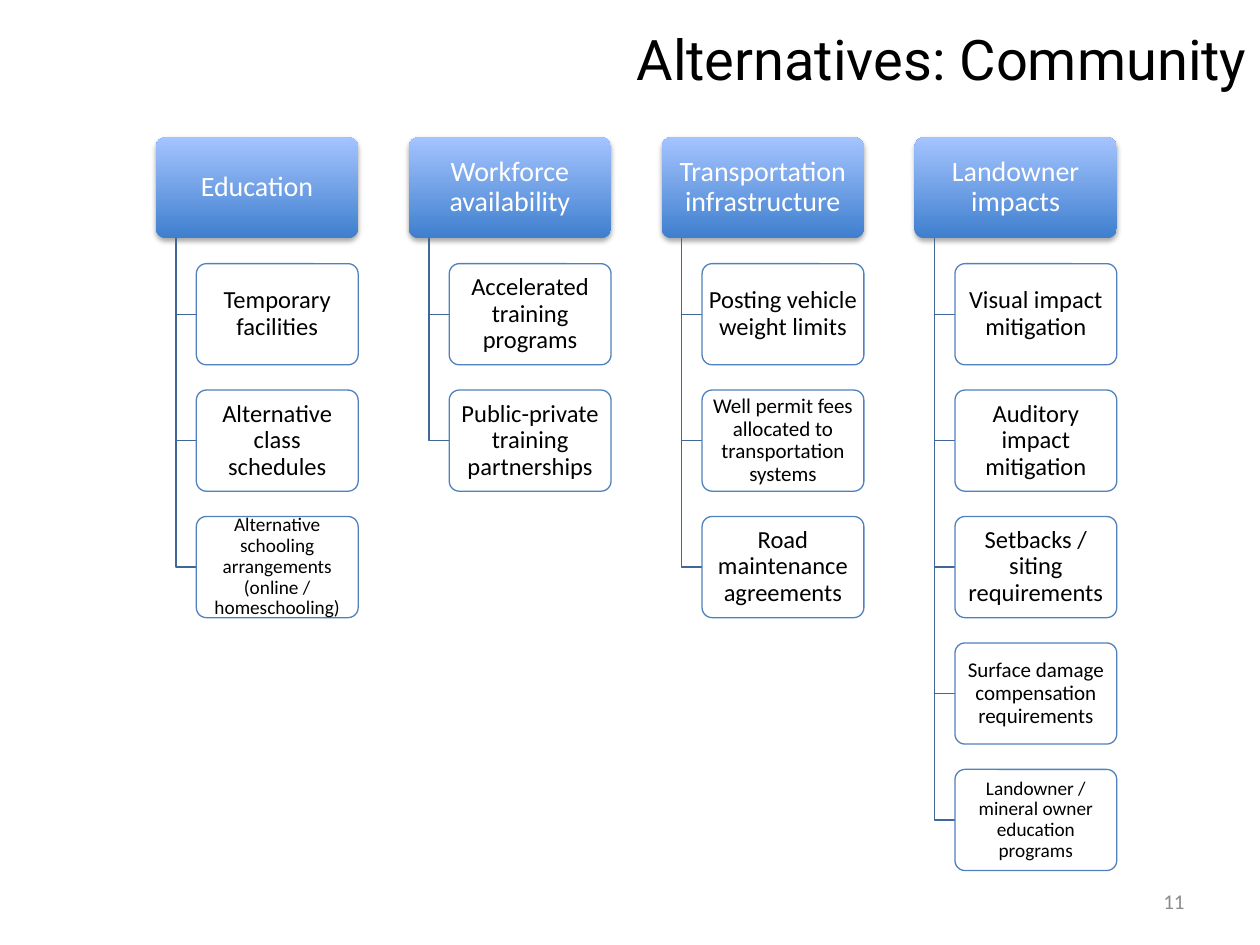
import pptx
import pptx.dml.color
import pptx.enum.shapes
import pptx.enum.text
import pptx.oxml
import pptx.oxml.ns
import pptx.util

Pt = pptx.util.Pt
RGBColor = pptx.dml.color.RGBColor
ALIGN = pptx.enum.text.PP_ALIGN

WHITE = RGBColor(0xFF, 0xFF, 0xFF)
BLACK = RGBColor(0x00, 0x00, 0x00)
GREY = RGBColor(0x8C, 0x8C, 0x8C)
HEADER_BOTTOM = RGBColor(0x3F, 0x7F, 0xCE)
HEADER_TOP = RGBColor(0xA4, 0xC4, 0xFF)
OUTLINE = RGBColor(0x4F, 0x81, 0xBD)
BRANCH = RGBColor(0x3F, 0x67, 0x97)

LEFT, TOP = 89.1, 78.4
HEADER_WIDTH = 115.6
BOX_HEIGHT = HEADER_WIDTH / 2
COLUMN_PITCH = HEADER_WIDTH * 1.25
ROW_PITCH = BOX_HEIGHT * 1.25
STEM_INSET = HEADER_WIDTH / 10
ITEM_INSET = HEADER_WIDTH / 5
ITEM_WIDTH = HEADER_WIDTH - ITEM_INSET

# Each column: heading, then (item, font size)
COLUMNS = [
    ("Education", [
        ("Temporary facilities", 14),
        ("Alternative class schedules", 14),
        ("Alternative schooling arrangements (online / homeschooling)", 11),
    ]),
    ("Workforce availability", [
        ("Accelerated training programs", 14),
        ("Public-private training partnerships", 14),
    ]),
    ("Transportation infrastructure", [
        ("Posting vehicle weight limits", 14),
        ("Well permit fees allocated to transportation systems", 12),
        ("Road maintenance agreements", 14),
    ]),
    ("Landowner impacts", [
        ("Visual impact mitigation", 14),
        ("Auditory impact mitigation", 14),
        ("Setbacks / siting requirements", 14),
        ("Surface damage compensation requirements", 12),
        ("Landowner / mineral owner education programs", 11),
    ]),
]

SHADOW_XML = (
    '<a:outerShdw %s blurRad="%d" dist="%d" dir="5400000" rotWithShape="0">'
    '<a:srgbClr val="000000"><a:alpha val="35000"/></a:srgbClr></a:outerShdw>'
    % (pptx.oxml.ns.nsdecls("a"), Pt(3.1), Pt(1.8))
)
ALPHA_XML = '<a:alpha %s val="90000"/>' % pptx.oxml.ns.nsdecls("a")


def write_text(frame, text, size, color, align, font="Calibri"):
    frame.text = text
    frame.word_wrap = True
    frame.vertical_anchor = pptx.enum.text.MSO_ANCHOR.MIDDLE
    paragraph = frame.paragraphs[0]
    paragraph.alignment = align
    paragraph.font.size = Pt(size)
    paragraph.font.name = font
    paragraph.font.color.rgb = color
    return paragraph


def add_box(slide, x, y, width, text, size, color):
    """Add a rounded box whose text margins follow the font size."""
    box = slide.shapes.add_shape(
        pptx.enum.shapes.MSO_SHAPE.ROUNDED_RECTANGLE,
        Pt(x), Pt(y), Pt(width), Pt(BOX_HEIGHT))
    box.adjustments[0] = 0.1
    box.shadow.inherit = False
    frame = box.text_frame
    frame.margin_left = frame.margin_right = Pt(size * 0.15)
    frame.margin_top = frame.margin_bottom = Pt(size * 0.1)
    write_text(frame, text, size, color, ALIGN.CENTER).line_spacing = 0.9
    return box


def add_header(slide, x, text):
    header = add_box(slide, x, TOP, HEADER_WIDTH, text, 16, WHITE)
    header.fill.gradient()
    header.fill.gradient_angle = 90
    for stop, color in zip(header.fill.gradient_stops, (HEADER_BOTTOM, HEADER_TOP)):
        stop.color.rgb = color
    header.line.fill.background()
    effects = header._element.spPr.find(pptx.oxml.ns.qn("a:effectLst"))
    effects.append(pptx.oxml.parse_xml(SHADOW_XML))


def add_item(slide, x, y, text, size):
    item = add_box(slide, x, y, ITEM_WIDTH, text, size, BLACK)
    item.fill.solid()
    item.fill.fore_color.rgb = WHITE
    fill_color = item._element.spPr.find(
        pptx.oxml.ns.qn("a:solidFill") + "/" + pptx.oxml.ns.qn("a:srgbClr"))
    fill_color.append(pptx.oxml.parse_xml(ALPHA_XML))
    item.line.color.rgb = OUTLINE
    item.line.width = Pt(0.75)


def add_branch(slide, column_x, item_y):
    """Draw the elbow from a header's bottom edge to an item's left edge."""
    stem_x = Pt(column_x + STEM_INSET)
    middle_y = Pt(item_y + BOX_HEIGHT / 2)
    builder = slide.shapes.build_freeform(stem_x, Pt(TOP + BOX_HEIGHT))
    builder.add_line_segments(
        [(stem_x, middle_y), (Pt(column_x + ITEM_INSET), middle_y)], close=False)
    branch = builder.convert_to_shape()
    branch.fill.background()
    branch.line.color.rgb = BRANCH
    branch.line.width = Pt(0.75)
    branch.shadow.inherit = False


def add_column(slide, x, heading, items):
    add_header(slide, x, heading)
    for row, (text, size) in enumerate(items, start=1):
        y = TOP + row * ROW_PITCH
        add_branch(slide, x, y)
        add_item(slide, x + ITEM_INSET, y, text, size)


def set_title(slide, text):
    title = slide.shapes.title
    title.left, title.top = Pt(246.2), Pt(0)
    title.width, title.height = Pt(473.8), Pt(66.2)
    write_text(title.text_frame, text, 32, BLACK, ALIGN.RIGHT, "Roboto")


def add_page_number(slide, number):
    box = slide.shapes.add_textbox(Pt(516), Pt(500.5), Pt(168), Pt(28.8))
    write_text(box.text_frame, number, 12, GREY, ALIGN.RIGHT)


def main():
    deck = pptx.Presentation()
    deck.slide_width, deck.slide_height = Pt(720), Pt(540)
    slide = deck.slides.add_slide(deck.slide_layouts.get_by_name("Title Only"))
    for index, (heading, items) in enumerate(COLUMNS):
        add_column(slide, LEFT + index * COLUMN_PITCH, heading, items)
    set_title(slide, "Alternatives: Community")
    add_page_number(slide, "11")
    deck.save("out.pptx")


if __name__ == "__main__":
    main()
